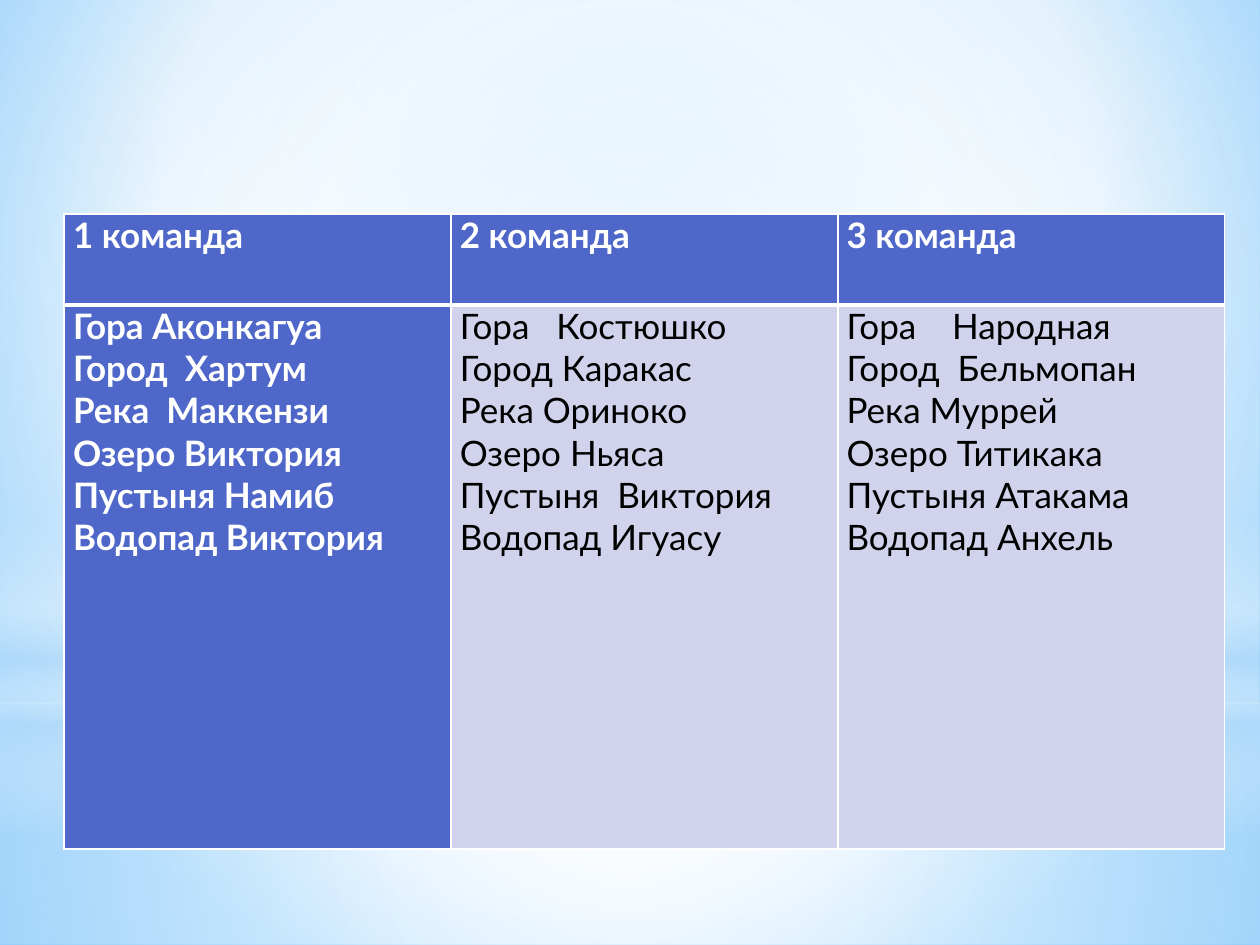
"""Build a slide with a table of geographic names for three teams."""
import lxml.etree
import pptx
import pptx.dml.color
import pptx.enum.shapes
import pptx.oxml.ns
import pptx.util

Inches = pptx.util.Inches
Pt = pptx.util.Pt
RGBColor = pptx.dml.color.RGBColor
qn = pptx.oxml.ns.qn
MSO_SHAPE = pptx.enum.shapes.MSO_SHAPE

WHITE = RGBColor(0xFF, 0xFF, 0xFF)
BLACK = RGBColor(0x00, 0x00, 0x00)
INDIGO = RGBColor(0x4E, 0x67, 0xC8)
LAVENDER = RGBColor(0xD0, 0xD3, 0xEB)
SKY = RGBColor(0xB4, 0xDC, 0xFA)
PALE_BLUE = RGBColor(0x9E, 0xD5, 0xFF)
BRIGHT_BLUE = RGBColor(0x5B, 0xB9, 0xFF)

CENTER = (50, 50, 50, 50)
FONT = "Lato"


def set_gradient(fill, root, stops, focus=None):
    fill.gradient()
    gradient = root.find(".//" + qn("a:gradFill"))
    for child in list(gradient):
        gradient.remove(child)
    stop_list = lxml.etree.SubElement(gradient, qn("a:gsLst"))
    for position, color, opacity in stops:
        stop = lxml.etree.SubElement(stop_list, qn("a:gs"), pos=str(position * 1000))
        tint = lxml.etree.SubElement(stop, qn("a:srgbClr"), val=str(color))
        lxml.etree.SubElement(tint, qn("a:alpha"), val=str(opacity * 1000))
    if focus:
        shade = lxml.etree.SubElement(gradient, qn("a:path"), path="circle")
        sides = {side: str(value * 1000) for side, value in zip("ltrb", focus)}
        lxml.etree.SubElement(shade, qn("a:fillToRect"), sides)
    else:
        lxml.etree.SubElement(gradient, qn("a:lin"), ang="5400000", scaled="0")


def set_borders(cell, widths):
    properties = cell._tc.get_or_add_tcPr()
    for index, (side, width) in enumerate(widths.items()):
        border = lxml.etree.Element(qn("a:ln" + side), w=str(Pt(width)))
        solid = lxml.etree.SubElement(border, qn("a:solidFill"))
        lxml.etree.SubElement(solid, qn("a:srgbClr"), val=str(WHITE))
        properties.insert(index, border)


presentation = pptx.Presentation()
presentation.slide_width = Inches(10)
presentation.slide_height = Inches(7.5)
slide = presentation.slides.add_slide(presentation.slide_layouts[6])

set_gradient(
    slide.background.fill, slide._element,
    [(0, PALE_BLUE, 100), (60, WHITE, 100), (100, BRIGHT_BLUE, 100)], (20, 10, 20, 60),
)

glows = [
    (MSO_SHAPE.RECTANGLE, 5.58, 1.92, CENTER,
     [(0, WHITE, 91), (37, WHITE, 76), (100, SKY, 79)]),
    (MSO_SHAPE.RECTANGLE, 0, 5.58, CENTER,
     [(0, WHITE, 89), (48, WHITE, 62), (100, SKY, 79)]),
    (MSO_SHAPE.RECTANGLE, 4.12, 2.5, None,
     [(0, WHITE, 0), (29, WHITE, 30), (45, SKY, 40),
      (55, WHITE, 26), (65, SKY, 60), (100, WHITE, 0)]),
    (MSO_SHAPE.OVAL, 1.75, 5.58, CENTER, [(0, WHITE, 100), (56, WHITE, 0)]),
]
for outline, top, height, focus, stops in glows:
    glow = slide.shapes.add_shape(outline, 0, Inches(top), Inches(10), Inches(height))
    glow.shadow.inherit = False
    glow.line.fill.background()
    set_gradient(glow.fill, glow._element, stops, focus)

teams = {
    "1 команда": ["Гора Аконкагуа", "Город  Хартум", "Река  Маккензи",
                  "Озеро Виктория", "Пустыня Намиб", "Водопад Виктория"],
    "2 команда": ["Гора   Костюшко", "Город Каракас", "Река Ориноко",
                  "Озеро Ньяса", "Пустыня  Виктория", "Водопад Игуасу"],
    "3 команда": ["Гора    Народная", "Город  Бельмопан", "Река Муррей",
                  "Озеро Титикака", "Пустыня Атакама", "Водопад Анхель"],
}
team_table = slide.shapes.add_table(
    2, len(teams), Inches(0.51), Inches(1.7), Inches(9.21), Inches(5.04)
).table
team_table.first_col = True
team_table.horz_banding = False
for row, height in zip(team_table.rows, (0.72, 4.32)):
    row.height = Inches(height)

for column, (team, places) in enumerate(teams.items()):
    team_table.columns[column].width = Inches(3.07)
    for row, lines in enumerate(([team], places)):
        cell = team_table.cell(row, column)
        emphasized = row == 0 or column == 0
        cell.margin_left = cell.margin_right = Inches(0.07)
        cell.margin_top = cell.margin_bottom = 0
        cell.fill.solid()
        cell.fill.fore_color.rgb = INDIGO if emphasized else LAVENDER
        set_borders(cell, {"L": 1, "R": 1, "T": 3 if row else 1, "B": 1 if row else 3})
        for index, line in enumerate(lines):
            frame = cell.text_frame
            paragraph = frame.add_paragraph() if index else frame.paragraphs[0]
            run = paragraph.add_run()
            run.text = line
            run.font.name = FONT
            run.font.size = Pt(20)
            run.font.bold = emphasized
            run.font.color.rgb = WHITE if emphasized else BLACK

presentation.save("out.pptx")
